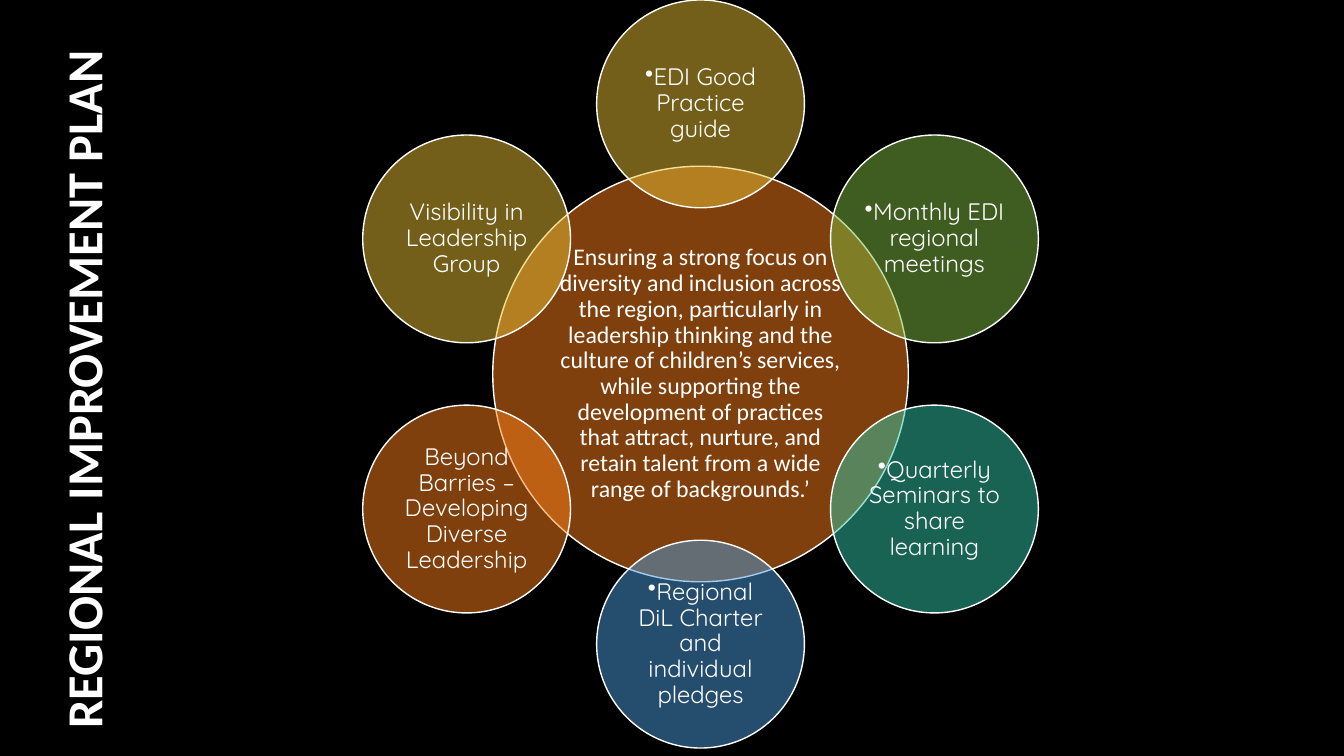
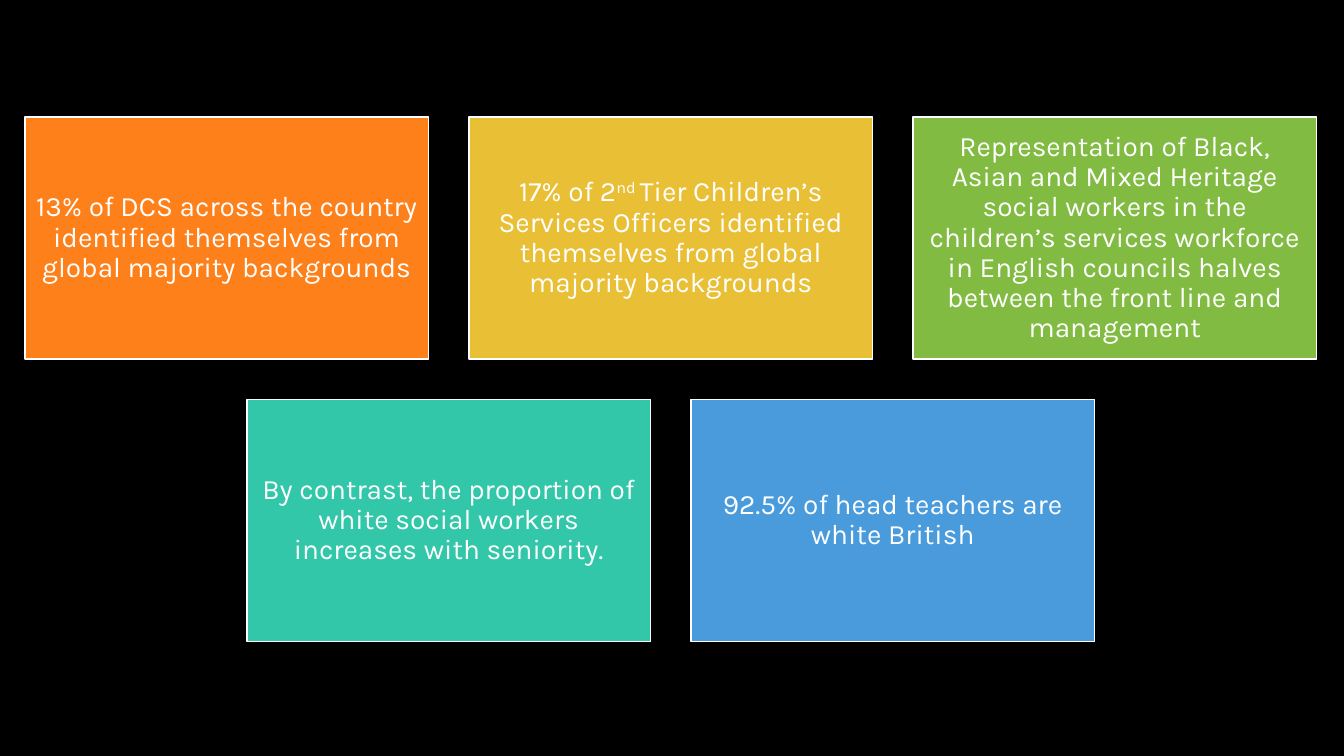
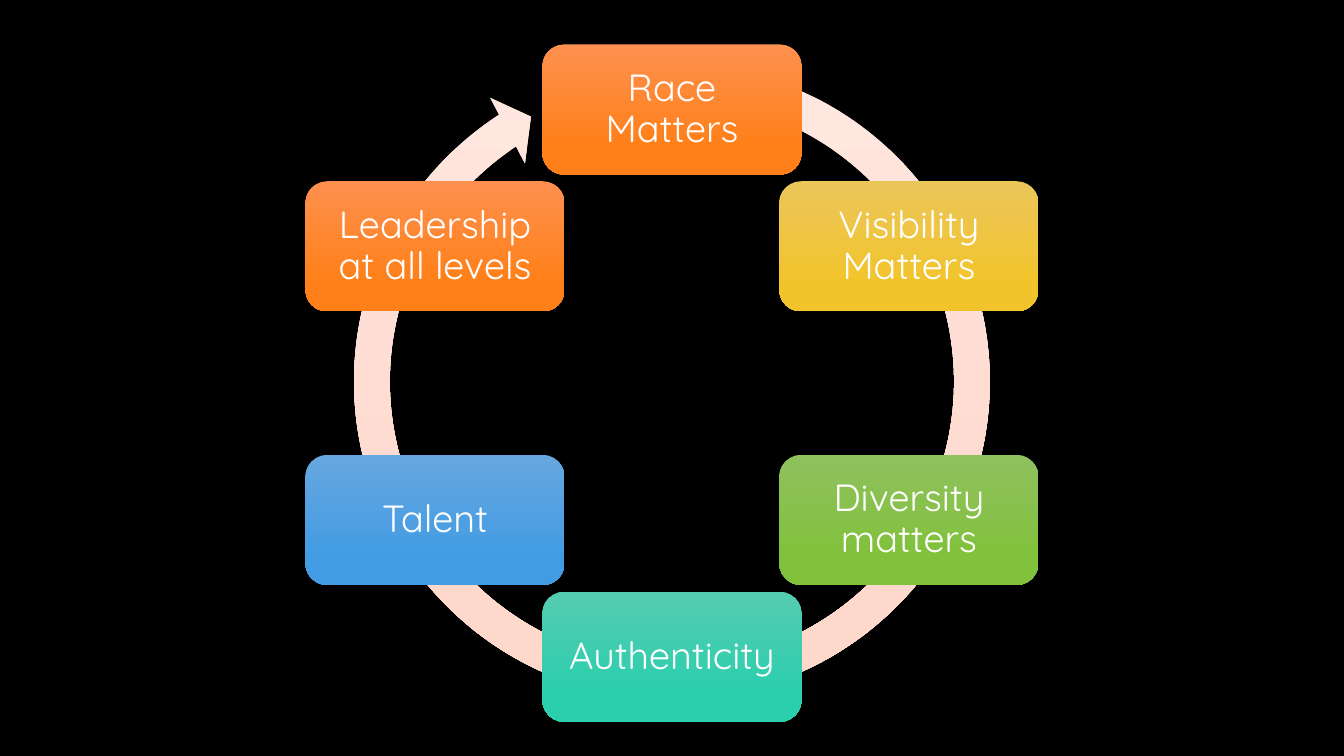
import dataclasses
import math

import lxml.etree
import pptx
import pptx.dml.color
import pptx.enum.shapes
import pptx.enum.text
import pptx.oxml.ns
import pptx.util

Cm = pptx.util.Cm
Pt = pptx.util.Pt
SHAPE = pptx.enum.shapes.MSO_SHAPE
ALIGN = pptx.enum.text.PP_ALIGN


@dataclasses.dataclass(frozen=True)
class Theme:
    background: str = "000000"
    text: str = "FFFFFF"
    orange: str = "FE801A"
    yellow: str = "E9BF35"
    green: str = "81BB42"
    teal: str = "32C7A9"
    blue: str = "4A9BDC"
    orange_fade: tuple = ("FE904F", "FF8019")
    yellow_fade: tuple = ("EBC659", "F2C42C")
    green_fade: tuple = ("8FC15E", "81C13C")
    teal_fade: tuple = ("55CCB1", "2BCEAD")
    blue_fade: tuple = ("66A7E0", "439CE3")
    arrow_fade: tuple = ("FFE8E1", "FFD8CC")
    fade_end: float = 0.78
    title_font: str = "Calibri"
    circle_font: str = "Quicksand"
    card_font: str = "Karla"
    title_size: int = 36
    circle_size: int = 17
    card_size: int = 20
    cycle_size: int = 27
    outline: int = 1
    line_spacing: float = 0.9


THEME = Theme()


@dataclasses.dataclass(frozen=True)
class Box:
    """An area of the slide, in centimetres."""
    left: float
    top: float
    width: float
    height: float

    @property
    def center(self):
        return self.left + self.width / 2, self.top + self.height / 2

    @classmethod
    def around(cls, center, width, height):
        return cls(center[0] - width / 2, center[1] - height / 2, width, height)

    def lengths(self):
        return [Cm(value) for value in dataclasses.astuple(self)]


def color(value):
    return pptx.dml.color.RGBColor.from_string(value)


def add_slide(presentation):
    slide = presentation.slides.add_slide(presentation.slide_layouts[6])
    slide.background.fill.solid()
    slide.background.fill.fore_color.rgb = color(THEME.background)
    return slide


def add_filled_shape(slide, kind, box, fill, outlined=False, opacity=None):
    """Add a preset shape; a pair of colours as fill gives a downward gradient."""
    shape = slide.shapes.add_shape(kind, *box.lengths())
    shape.shadow.inherit = False
    if isinstance(fill, tuple):
        shape.fill.gradient()
        shape.fill.gradient_angle = 270
        for stop, value, position in zip(shape.fill.gradient_stops, fill, (0, THEME.fade_end)):
            stop.color.rgb = color(value)
            stop.position = position
    else:
        shape.fill.solid()
        shape.fill.fore_color.rgb = color(fill)
    if opacity is not None:
        qn = pptx.oxml.ns.qn
        solid_color = shape.fill._xPr.find(qn("a:solidFill")).find(qn("a:srgbClr"))
        lxml.etree.SubElement(solid_color, qn("a:alpha")).set("val", str(opacity * 1000))
    if outlined:
        shape.line.color.rgb = color(THEME.text)
        shape.line.width = Pt(THEME.outline)
    else:
        shape.line.fill.background()
    return shape


def write_text(shape, runs, font, size, inset, alignment=ALIGN.CENTER, bold=False, bullet=False):
    """Write one paragraph from (text, is_superscript) runs or a plain string."""
    frame = shape.text_frame
    frame.word_wrap = True
    frame.vertical_anchor = pptx.enum.text.MSO_ANCHOR.MIDDLE
    frame.margin_left = frame.margin_right = Cm(inset)
    frame.margin_top = frame.margin_bottom = Cm(inset)
    paragraph = frame.paragraphs[0]
    paragraph.alignment = alignment
    paragraph.line_spacing = THEME.line_spacing
    if bullet:
        properties = paragraph._p.get_or_add_pPr()
        properties.set("marL", "0")
        properties.set("indent", "0")
        mark = lxml.etree.SubElement(properties, pptx.oxml.ns.qn("a:buChar"))
        mark.set("char", "•")
    for text, superscript in [(runs, False)] if isinstance(runs, str) else runs:
        run = paragraph.add_run()
        run.text = text
        run.font.name = font
        run.font.size = Pt(size)
        run.font.bold = bold
        run.font.color.rgb = color(THEME.text)
        if superscript:
            run._r.get_or_add_rPr().set("baseline", "30000")


def ring_boxes(box, count, width, height):
    """Equal boxes clockwise from the top, on a circle that fills the given box."""
    radius = (box.height - height) / 2
    x, y = box.center
    for index in range(count):
        angle = 2 * math.pi * index / count
        center = x + radius * math.sin(angle), y - radius * math.cos(angle)
        yield Box.around(center, width, height)


def add_side_title(slide, box, text):
    """Add a title that reads upwards inside the given tall box."""
    unrotated = Box.around(box.center, box.height, box.width)
    shape = slide.shapes.add_textbox(*unrotated.lengths())
    shape.rotation = 270
    write_text(shape, text, THEME.title_font, THEME.title_size, 0.25, ALIGN.RIGHT, bold=True)


def add_radial_venn(slide, box, hub_text, satellites):
    satellite_size = box.height / 3.6
    hub_size = 2 * satellite_size

    def add_circle(area, fill, text, font, bullet=False):
        circle = add_filled_shape(slide, SHAPE.OVAL, area, fill, outlined=True, opacity=50)
        write_text(circle, text, font, THEME.circle_size, 0.05, bullet=bullet)

    add_circle(Box.around(box.center, hub_size, hub_size), THEME.orange, hub_text, THEME.title_font)
    areas = ring_boxes(box, len(satellites), satellite_size, satellite_size)
    for area, (text, fill, bullet) in zip(areas, satellites):
        add_circle(area, fill, text, THEME.circle_font, bullet)


def add_card_rows(slide, box, rows, gap=1.02):
    """Add rows of equal cards; shorter rows are centred."""
    columns = max(len(row) for row in rows)
    width = (box.width - gap * (columns - 1)) / columns
    height = (box.height - gap * (len(rows) - 1)) / len(rows)
    for row_index, row in enumerate(rows):
        left = box.left + (columns - len(row)) * (width + gap) / 2
        top = box.top + row_index * (height + gap)
        for column, (runs, fill) in enumerate(row):
            area = Box(left + column * (width + gap), top, width, height)
            card = add_filled_shape(slide, SHAPE.RECTANGLE, area, fill, outlined=True)
            write_text(card, runs, THEME.card_font, THEME.card_size, 0.2)


def add_cycle(slide, box, steps):
    arrow_size = box.height - 0.08
    arrow_box = Box(box.center[0] - arrow_size / 2, box.top, arrow_size, arrow_size)
    arrow = add_filled_shape(slide, SHAPE.CIRCULAR_ARROW, arrow_box, THEME.arrow_fade)
    for index, value in enumerate((0.053, 3.126, 142.063, 171.398, 0.055)):
        arrow.adjustments[index] = value
    for area, (text, fill) in zip(ring_boxes(box, len(steps), 6.53, 3.28), steps):
        step = add_filled_shape(slide, SHAPE.ROUNDED_RECTANGLE, area, fill)
        write_text(step, text, THEME.circle_font, THEME.cycle_size, 0.28)


def main():
    presentation = pptx.Presentation()
    presentation.slide_width = Cm(33.87)
    presentation.slide_height = Cm(19.05)

    plan = add_slide(presentation)
    add_side_title(plan, Box(0.28, 1.02, 3.78, 17.75), "REGIONAL IMPROVEMENT PLAN")
    add_radial_venn(
        plan,
        Box(8.23, 0, 18.85, 18.85),
        "Ensuring a strong focus on diversity and inclusion across the region, "
        "particularly in leadership thinking and the culture of children’s services, "
        "while supporting the development of practices that attract, nurture, "
        "and retain talent from a wide range of backgrounds.’",
        [
            ("EDI Good Practice guide", THEME.yellow, True),
            ("Monthly EDI regional meetings", THEME.green, True),
            ("Quarterly Seminars to share learning", THEME.teal, True),
            ("Regional DiL Charter and individual pledges", THEME.blue, True),
            ("Beyond Barries – Developing Diverse Leadership", THEME.orange, False),
            ("Visibility in Leadership Group", THEME.yellow, False),
        ],
    )

    figures = add_slide(presentation)
    second_tier = [
        ("17% of 2", False),
        ("nd ", True),
        ("Tier Children’s Services Officers identified themselves "
         "from global majority backgrounds", False),
    ]
    add_card_rows(figures, Box(0.63, 2.95, 32.55, 13.22), [
        [
            ("13% of DCS across the country identified themselves "
             "from global majority backgrounds", THEME.orange),
            (second_tier, THEME.yellow),
            ("Representation of Black, Asian and Mixed Heritage social workers "
             "in the children’s services workforce in English councils halves "
             "between the front line and management", THEME.green),
        ],
        [
            ("By contrast, the proportion of white social workers "
             "increases with seniority.", THEME.teal),
            ("92.5% of head teachers are white British", THEME.blue),
        ],
    ])

    matters = add_slide(presentation)
    add_cycle(matters, Box(8.4, 1.12, 17.07, 17.07), [
        ("Race Matters", THEME.orange_fade),
        ("Visibility Matters", THEME.yellow_fade),
        ("Diversity matters", THEME.green_fade),
        ("Authenticity", THEME.teal_fade),
        ("Talent", THEME.blue_fade),
        ("Leadership at all levels", THEME.orange_fade),
    ])

    presentation.save("out.pptx")


if __name__ == "__main__":
    main()
